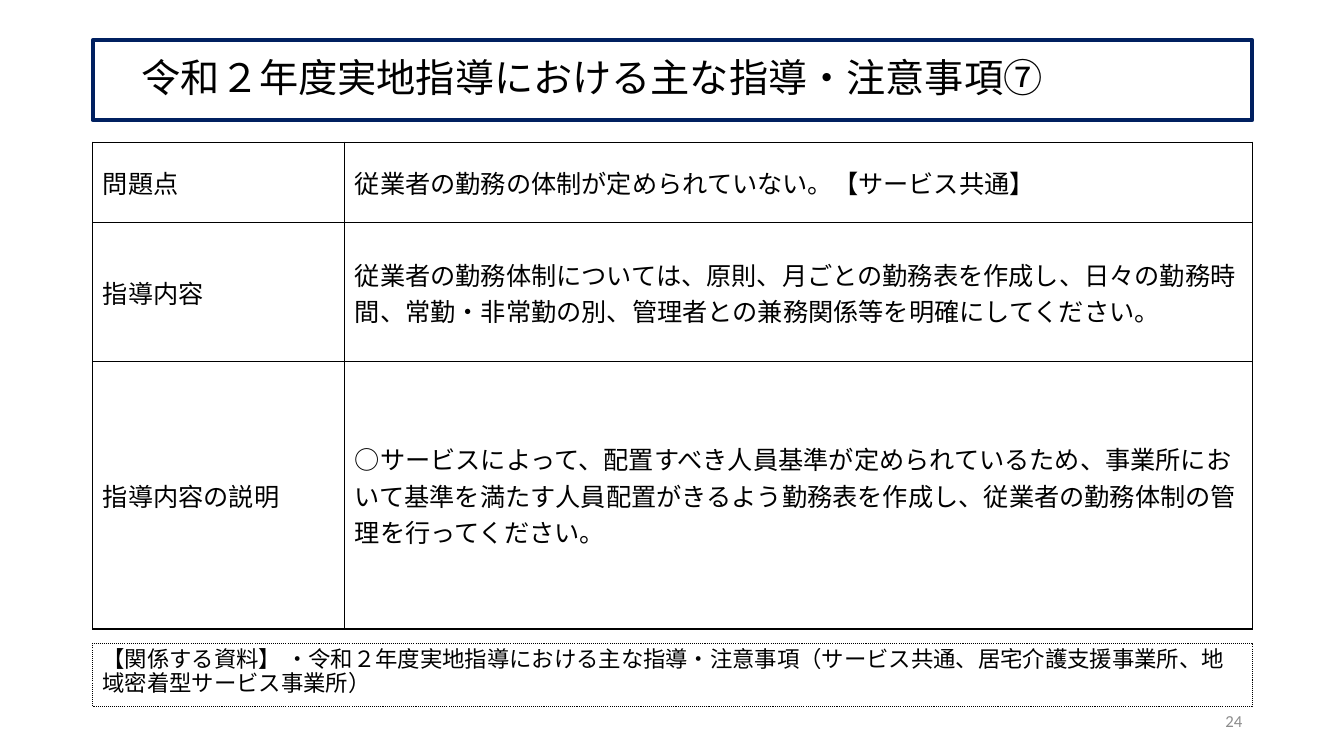
from lxml import etree
from pptx import Presentation
from pptx.dml.color import RGBColor
from pptx.enum.dml import MSO_LINE
from pptx.enum.shapes import MSO_SHAPE
from pptx.enum.text import MSO_ANCHOR, PP_ALIGN
from pptx.oxml.ns import qn
from pptx.util import Inches, Pt

RECTANGLE = MSO_SHAPE.RECTANGLE
TOP, MIDDLE = MSO_ANCHOR.TOP, MSO_ANCHOR.MIDDLE
LEFT, RIGHT = PP_ALIGN.LEFT, PP_ALIGN.RIGHT
DOTTED = MSO_LINE.ROUND_DOT
NAVY = RGBColor(0x00, 0x20, 0x60)
BLACK = RGBColor(0x00, 0x00, 0x00)
GREY = RGBColor(0x8C, 0x8C, 0x8C)

TITLE = "　令和２年度実地指導における主な指導・注意事項⑦"
GUIDANCE = [
    ("問題点", "従業者の勤務の体制が定められていない。【サービス共通】"),
    ("指導内容", "従業者の勤務体制については、原則、月ごとの勤務表を作成し、日々の勤務時間、"
     "常勤・非常勤の別、管理者との兼務関係等を明確にしてください。"),
    ("指導内容の説明", "○サービスによって、配置すべき人員基準が定められているため、"
     "事業所において基準を満たす人員配置がきるよう勤務表を作成し、"
     "従業者の勤務体制の管理を行ってください。"),
]
REFERENCES = ("【関係する資料】 ・令和２年度実地指導における主な指導・注意事項"
              "（サービス共通、居宅介護支援事業所、地域密着型サービス事業所）")


class GuidanceSlide:
    """Draws framed text and tables on a grid of 0.5 by 0.2 inch inside the margins."""

    column, row = 0.5, 0.2
    margin_left, margin_top = 0.92, 0.4
    body_font, label_font = "Calibri", "Arial"

    def __init__(self, presentation):
        self.slide = presentation.slides.add_slide(presentation.slide_layouts[6])

    def place(self, column, row, columns, rows):
        return (Inches(self.margin_left + column * self.column),
                Inches(self.margin_top + row * self.row),
                Inches(columns * self.column), Inches(rows * self.row))

    def add_text(self, frame, text, size, font=body_font, color=BLACK,
                 align=LEFT, spacing=None, before=None):
        frame.word_wrap = True
        paragraph = frame.paragraphs[0]
        paragraph.alignment = align
        paragraph.line_spacing = spacing
        paragraph.space_before = before
        run = paragraph.add_run()
        run.text = text
        run.font.size = Pt(size)
        run.font.name = font
        run.font.color.rgb = color

    def framed(self, area, text, size, color, weight, dash=None, anchor=MIDDLE, before=None):
        frame = self.slide.shapes.add_shape(RECTANGLE, *self.place(*area))
        frame.shadow.inherit = False
        frame.fill.background()
        frame.line.color.rgb = color
        frame.line.width = Pt(weight)
        frame.line.dash_style = dash
        frame.text_frame.vertical_anchor = anchor
        self.add_text(frame.text_frame, text, size, spacing=0.9, before=before)

    def label(self, area, text, size, color, align):
        box = self.slide.shapes.add_textbox(*self.place(*area))
        box.text_frame.vertical_anchor = MIDDLE
        self.add_text(box.text_frame, text, size, color=color, align=align)

    def border(self, cell, weight):
        properties = cell._tc.get_or_add_tcPr()
        for position, side in enumerate(("lnL", "lnR", "lnT", "lnB")):
            line = etree.Element(qn(f"a:{side}"), w=str(Pt(weight)))
            fill = etree.SubElement(line, qn("a:solidFill"))
            etree.SubElement(fill, qn("a:srgbClr"), val=str(BLACK))
            properties.insert(position, line)

    def table(self, column, row, widths, heights, contents, size):
        area = self.place(column, row, sum(widths), sum(heights))
        table = self.slide.shapes.add_table(len(heights), len(widths), *area).table
        table.first_row = table.horz_banding = False
        for index, width in enumerate(widths):
            table.columns[index].width = Inches(width * self.column)
        for index, height in enumerate(heights):
            table.rows[index].height = Inches(height * self.row)
            for side, font in enumerate((self.label_font, self.body_font)):
                cell = table.cell(index, side)
                cell.fill.background()
                cell.vertical_anchor = MIDDLE
                self.border(cell, 1)
                self.add_text(cell.text_frame, contents[index][side], size, font)


def main():
    presentation = Presentation()
    presentation.slide_width = Inches(13.33)
    presentation.slide_height = Inches(7.5)
    page = GuidanceSlide(presentation)
    page.framed((0, 0, 23, 3.95), TITLE, 28, NAVY, 3)
    page.table(0, 5.05, (5, 18), (4, 6.9, 13.25), GUIDANCE, 18)
    page.label((17, 32.75, 6, 2), "24", 12, GREY, RIGHT)
    page.framed((0, 29.9, 23, 3.15), REFERENCES, 16, BLACK, 0.75, DOTTED, TOP, Pt(10))
    presentation.save("out.pptx")


if __name__ == "__main__":
    main()
